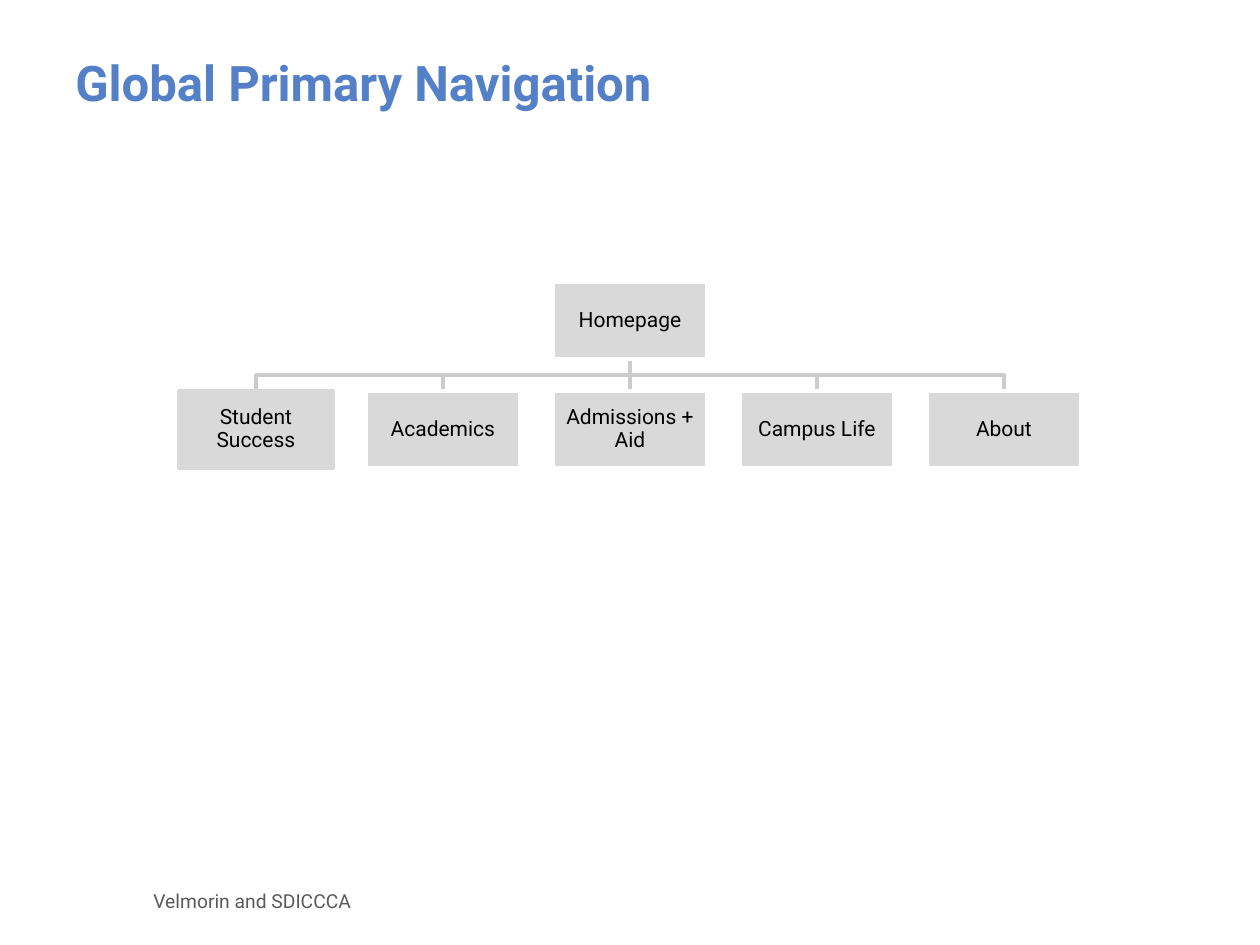
import pptx
import pptx.util
import pptx.dml.color
import pptx.enum.shapes
import pptx.enum.text
import pptx.oxml.ns
import lxml.etree

PX = 914400 / 126  # EMU in one px

BLUE = pptx.dml.color.RGBColor(0x54, 0x80, 0xC7)
DARK = pptx.dml.color.RGBColor(0x59, 0x59, 0x59)
BLACK = pptx.dml.color.RGBColor(0, 0, 0)
WHITE = pptx.dml.color.RGBColor(0xFF, 0xFF, 0xFF)
GREY = pptx.dml.color.RGBColor(0xD9, 0xD9, 0xD9)
RULE = pptx.dml.color.RGBColor(0xCC, 0xCC, 0xCC)

FONT = "Roboto"
PAGES = ["Student Success", "Academics", "Admissions + Aid", "Campus Life", "About"]


def emu(*vals):
    return [pptx.util.Emu(round(v * PX)) for v in vals]


def write(shape, text, size, color, bold=False):
    frame = shape.text_frame
    frame.word_wrap = True
    frame.vertical_anchor = pptx.enum.text.MSO_ANCHOR.MIDDLE
    frame.text = text
    font = frame.paragraphs[0].runs[0].font
    font.name, font.size, font.bold = FONT, pptx.util.Pt(size), bold
    font.color.rgb = color
    return frame


def label(slide, box, text, size, color, bold=False):
    write(slide.shapes.add_textbox(*emu(*box)), text, size, color, bold)


def stroke(line, color):
    line.color.rgb = color
    line.width = pptx.util.Pt(2)


def node(slide, box, text, edge):
    kind = pptx.enum.shapes.MSO_SHAPE.RECTANGLE
    shape = slide.shapes.add_shape(kind, *emu(*box))
    shape.shadow.inherit = False
    shape.fill.solid()
    shape.fill.fore_color.rgb = GREY
    stroke(shape.line, edge)
    frame = write(shape, text, 12, BLACK)
    frame.margin_left = frame.margin_right = emu(1)[0]
    frame.margin_top = frame.margin_bottom = emu(1)[0]
    para = frame.paragraphs[0]
    para.alignment = pptx.enum.text.PP_ALIGN.CENTER
    para.line_spacing = 0.9
    return shape


def elbow(slide, x, top, to, end):
    mid = (top + end) / 2
    path = slide.shapes.build_freeform(x, top, scale=PX)
    path.add_line_segments([(x, mid), (to, mid), (to, end)], close=False)
    shape = path.convert_to_shape()
    shape.shadow.inherit = False
    shape.fill.background()
    stroke(shape.line, RULE)


def stem(slide, x, top, end):
    kind = pptx.enum.shapes.MSO_CONNECTOR.STRAIGHT
    line = slide.shapes.add_connector(kind, *emu(x, top, x, end))
    stroke(line.line, RULE)
    props = line._element.spPr
    lxml.etree.SubElement(props, pptx.oxml.ns.qn("a:effectLst"))
    return line


def tree(slide, box, root, pages):
    left, top, width, height = box
    wide, high = 154, 77
    step = (width - wide) / (len(pages) - 1)
    mid = left + width / 2
    row = top + height - high
    cols = [left + i * step for i in range(len(pages))]

    # Branches lie behind the boxes
    for x in reversed(cols):
        if x + wide / 2 == mid:
            trunk = stem(slide, mid, top + high, row)
        else:
            elbow(slide, mid, top + high, x + wide / 2, row)

    # Homepage and its sections; the first section has a grey edge
    home = node(slide, (mid - wide / 2, top, wide, high), root, WHITE)
    kids = [node(slide, (x, row, wide, high), page, WHITE if i else GREY)
            for i, (x, page) in enumerate(zip(cols, pages))]
    trunk.begin_connect(home, 2)
    trunk.end_connect(kids[len(kids) // 2], 0)


def main():
    deck = pptx.Presentation()
    deck.slide_width, deck.slide_height = emu(1260, 945)
    slide = deck.slides.add_slide(deck.slide_layouts[6])

    tree(slide, (179, 282, 902, 186), "Homepage", PAGES)
    # Title and footer
    label(slide, (63, 37, 1134, 89), "Global Primary Navigation", 28, BLUE, True)
    label(slide, (141, 876, 617, 50), "Velmorin and SDICCCA", 11, DARK)

    deck.save("out.pptx")


if __name__ == "__main__":
    main()
